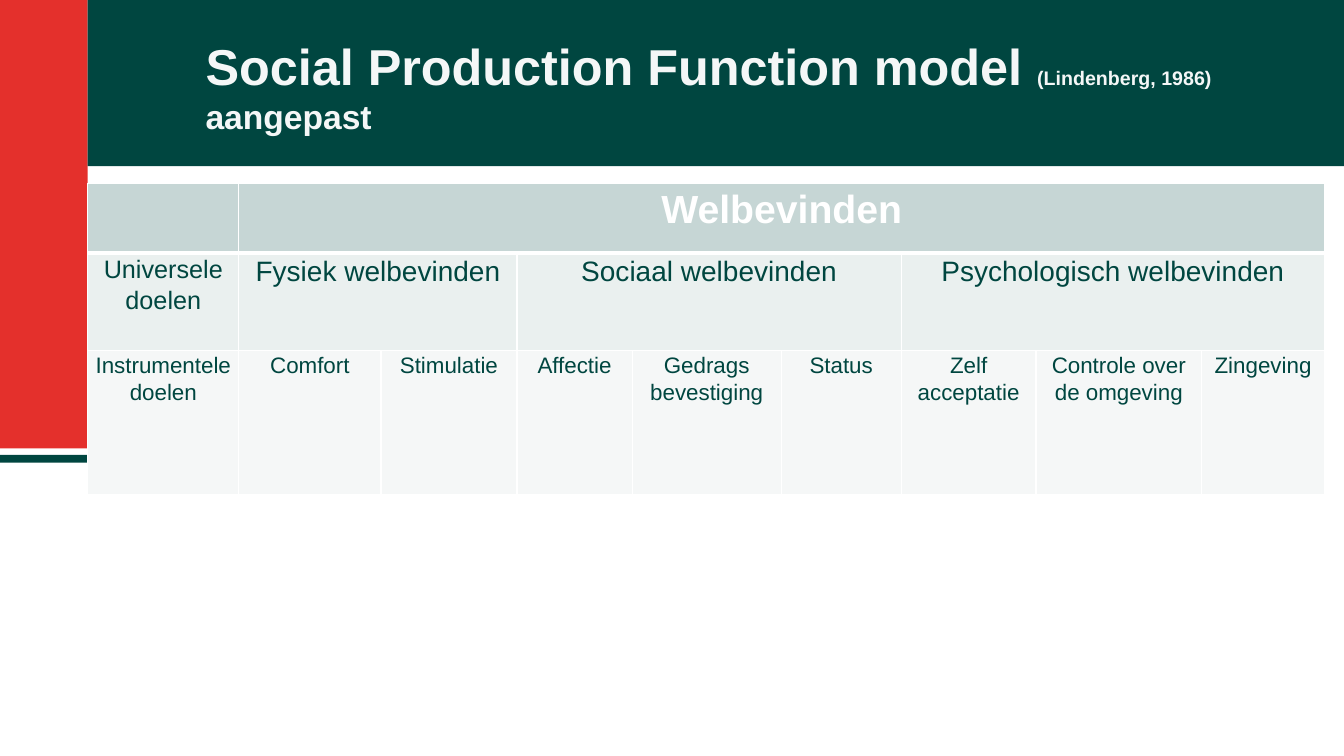
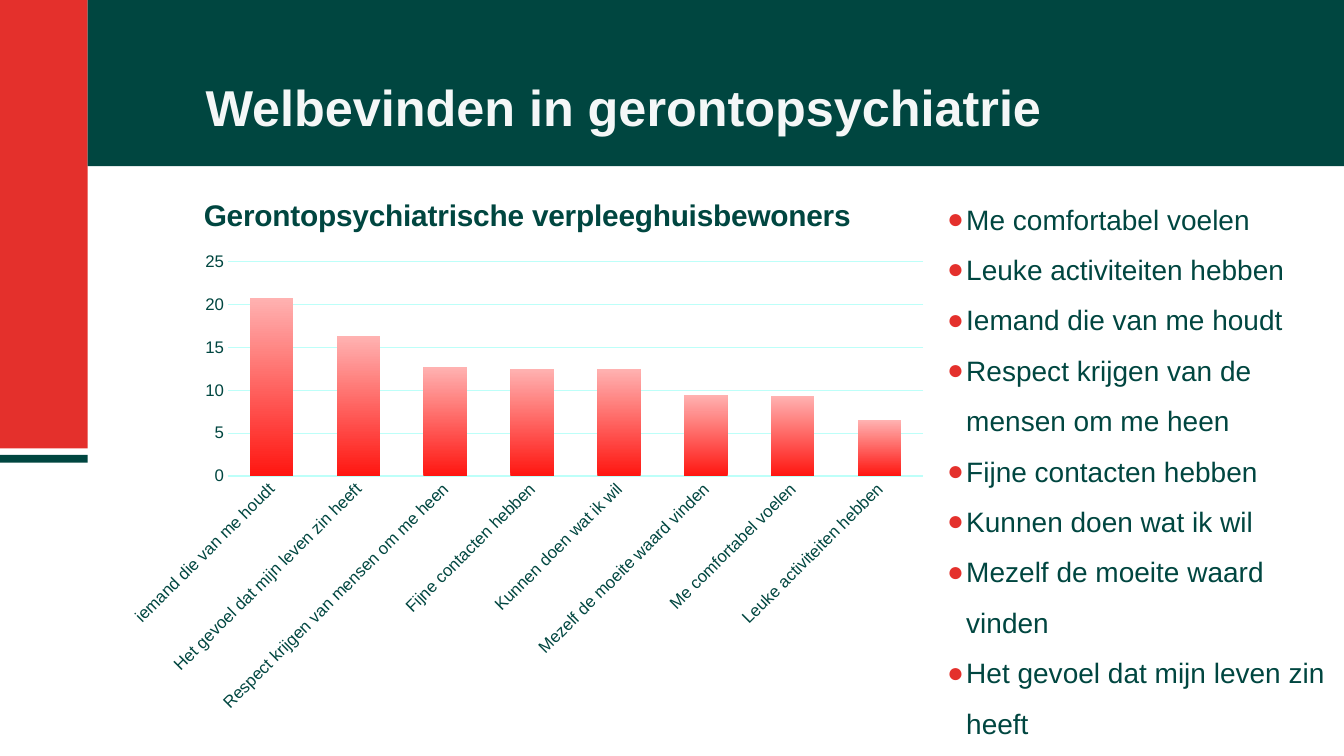
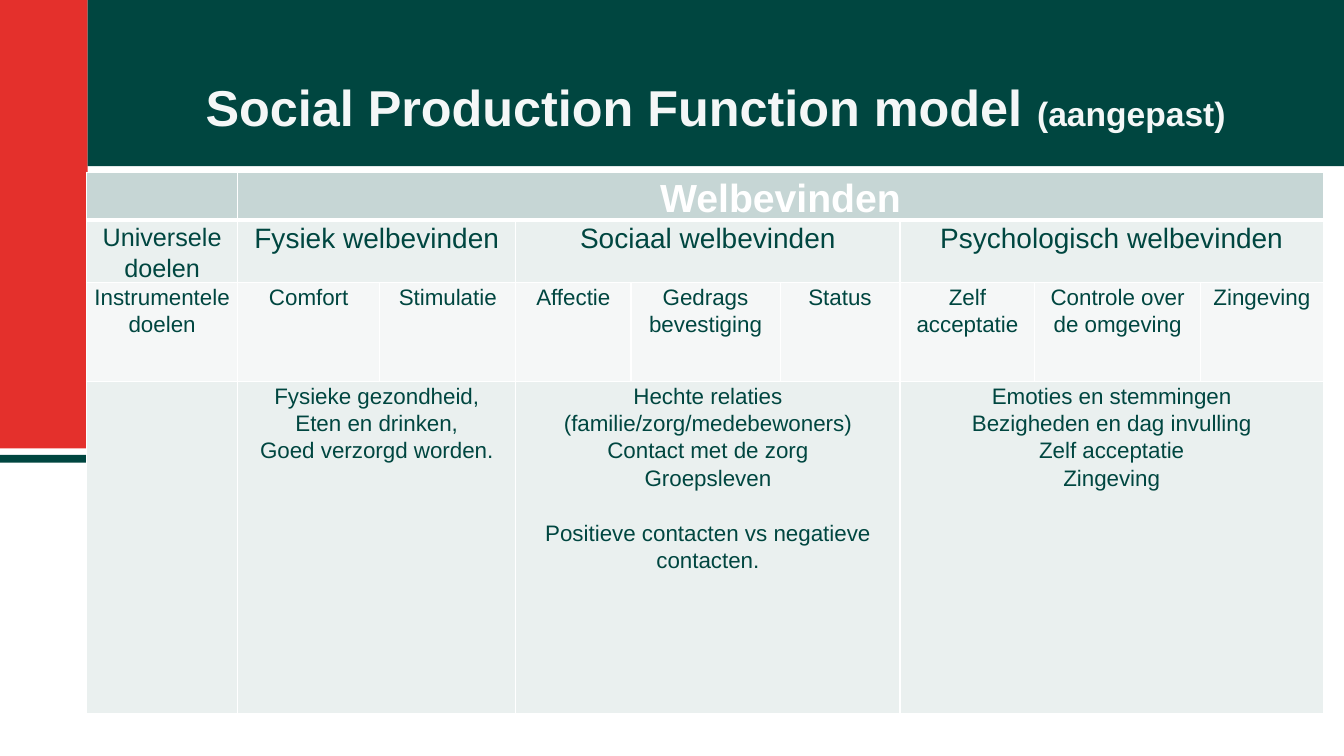
from lxml import etree
from pptx import Presentation
from pptx import util as u
from pptx.chart.data import CategoryChartData
from pptx.dml.color import RGBColor
from pptx.enum import chart as ch, shapes as sh, text as tx
from pptx.oxml.ns import qn

RED, GREEN, PALE, WHITE = "E4302C", "004640", "F4F7F7", "FFFFFF"
GRID = "BDFFF9"
FILLS = ["C6D6D5", "EAF0EF", "F5F7F7", "EAF0EF"]
BANDS = [
    (0, 0, 2.21, 11.3, RED),
    (0, 11.46, 2.21, 0.2, GREEN),
    (2.21, 0, 31.66, 4.19, GREEN),
]
INSET = u.Cm(0.25)
FRAME = dict(
    margin_left=INSET, margin_right=INSET, margin_top=INSET,
    margin_bottom=INSET, word_wrap=True, auto_size=tx.MSO_AUTO_SIZE.NONE,
)
CELL = dict(
    margin_left=u.Cm(0.18), margin_right=u.Cm(0.18),
    margin_top=0, margin_bottom=0,
)
COLS = [3.81, 3.58, 3.43, 2.9, 3.76, 3.02, 3.4, 4.17, 3.1]
GOALS = [
    [("", 1, 18), ("Welbevinden", 8, 28)],
    [("Universele doelen", 1, 18), ("Fysiek welbevinden", 2, 20),
     ("Sociaal welbevinden", 3, 20), ("Psychologisch welbevinden", 3, 20)],
    [(name, 1, 16) for name in (
        "Instrumentele doelen", "Comfort", "Stimulatie", "Affectie",
        "Gedrags bevestiging", "Status", "Zelf acceptatie",
        "Controle over de omgeving", "Zingeving")],
]
NEEDS = [
    ("", 1, 16),
    ("Fysieke gezondheid,\nEten en drinken,\nGoed verzorgd worden.", 2, 16),
    ("Hechte relaties (familie/zorg/medebewoners)\nContact met de zorg\n"
     "Groepsleven\nPositieve contacten vs negatieve contacten.", 3, 16),
    ("Emoties en stemmingen\nBezigheden en dag invulling\n"
     "Zelf acceptatie\nZingeving", 3, 16),
]
SCORES = {
    "iemand die van me houdt": 20.8,
    "Het gevoel dat mijn leven zin heeft": 16.3,
    "Respect krijgen van mensen om me heen": 12.7,
    "Fijne contacten hebben": 12.5,
    "Kunnen doen wat ik wil": 12.5,
    "Mezelf de moeite waard vinden": 9.4,
    "Me comfortabel voelen": 9.3,
    "Leuke activiteiten hebben": 6.5,
}
WISHES = [
    "Me comfortabel voelen",
    "Leuke activiteiten hebben",
    "Iemand die van me houdt",
    "Respect krijgen van de mensen om me heen",
    "Fijne contacten hebben",
    "Kunnen doen wat ik wil",
    "Mezelf de moeite waard vinden",
    "Het gevoel dat mijn leven zin heeft",
]


def rgb(code):
    return RGBColor.from_string(code)


def apply(obj, vals):
    for key, val in vals.items():
        setattr(obj, key, val)


def place(shape, x, y, w, h):
    apply(shape, dict(left=u.Cm(x), top=u.Cm(y), width=u.Cm(w), height=u.Cm(h)))


def write(font, size, color=GREEN, bold=False):
    apply(font, dict(name="Arial", size=u.Pt(size), bold=bold))
    font.color.rgb = rgb(color)


def add(parent, tag, **vals):
    return etree.SubElement(parent, qn(tag), vals)


def set_master(prs, slide):
    title = prs.slide_master.placeholders[0]
    for x, y, w, h, color in BANDS:
        band = slide.shapes.add_shape(
            sh.MSO_SHAPE.RECTANGLE, *map(u.Cm, (x, y, w, h)))
        band.shadow.inherit = False
        band.fill.solid()
        band.fill.fore_color.rgb = rgb(color)
        band.line.fill.background()
        title.element.addprevious(band.element)
    place(title, 4.93, 0.48, 27.33, 3.2)
    apply(title.text_frame, FRAME)
    title.text_frame.vertical_anchor = tx.MSO_ANCHOR.BOTTOM


def set_title(slide, *parts):
    frame = slide.shapes.title.text_frame
    frame.auto_size = tx.MSO_AUTO_SIZE.NONE
    para = frame.paragraphs[0]
    para.alignment = tx.PP_ALIGN.LEFT
    for text, size in parts:
        if text == "\n":
            para.add_line_break()
            continue
        run = para.add_run()
        run.text = text
        write(run.font, size, PALE, True)


def set_edges(cell, row):
    props = cell._tc.get_or_add_tcPr()
    thick = {(0, "B"), (1, "T")}
    for side in "LRTB":
        width = u.Pt(3 if (row, side) in thick else 1)
        line = add(props, f"a:ln{side}", w=str(width))
        add(add(line, "a:solidFill"), "a:srgbClr", val=WHITE)


def fill_cell(cell, text, size, head):
    cell.text = text
    for para in cell.text_frame.paragraphs:
        apply(para, dict(alignment=tx.PP_ALIGN.CENTER, line_spacing=1.1))
        write(para.font, size, WHITE if head else GREEN, head)
        for run in para.runs:
            write(run.font, size, WHITE if head else GREEN, head)


def add_goals(slide, x, y, rows, highs):
    table = slide.shapes.add_table(
        len(rows), len(COLS), u.Cm(x), u.Cm(y),
        u.Cm(sum(COLS)), u.Cm(sum(highs))).table
    table.horz_banding = False
    for col, width in zip(table.columns, COLS):
        col.width = u.Cm(width)
    for i, (row, high) in enumerate(zip(rows, highs)):
        table.rows[i].height = u.Cm(high)
        for cell in table.rows[i].cells:
            apply(cell, CELL)
            set_edges(cell, i)
            cell.fill.solid()
            cell.fill.fore_color.rgb = rgb(FILLS[i])
        start = 0
        for text, span, size in row:
            cell = table.cell(i, start)
            if span > 1:
                cell.merge(table.cell(i, start + span - 1))
            fill_cell(cell, text, size, i == 0)
            start += span
    return table


def add_scores(slide):
    name = "Gerontopsychiatrische verpleeghuisbewoners"
    data = CategoryChartData()
    data.categories = list(SCORES)
    data.add_series(name, list(SCORES.values()))
    chart = slide.shapes.add_chart(
        ch.XL_CHART_TYPE.COLUMN_CLUSTERED,
        *map(u.Cm, (2.9, 4.42, 20.78, 13.79)), data).chart
    write(chart.font, 10)
    chart.has_legend = False
    chart.has_title = True
    chart.chart_title.text_frame.text = name
    write(chart.chart_title.text_frame.paragraphs[0].runs[0].font, 21.3, bold=True)

    plot = chart.plots[0]
    apply(plot, dict(gap_width=100, overlap=-24, vary_by_categories=False))
    fill = plot.series[0].format.fill
    fill.gradient()
    fill.gradient_angle = 90
    for stop, color, pos in zip(fill.gradient_stops, ("FF1611", "FFB2B1"), (0, 1)):
        stop.color.rgb = rgb(color)
        stop.position = pos

    cats, vals = chart.category_axis, chart.value_axis
    for axis in (cats, vals):
        axis.major_tick_mark = ch.XL_TICK_MARK.NONE
        write(axis.tick_labels.font, 12)
    apply(vals, dict(minimum_scale=0, maximum_scale=25, major_unit=5))
    vals.format.line.fill.background()
    for line, width in ((cats.format.line, 1), (vals.major_gridlines.format.line, 0.75)):
        line.color.rgb = rgb(GRID)
        line.width = u.Pt(width)
    chart.element.xpath("//c:catAx/c:txPr/a:bodyPr")[0].set("rot", "-2700000")


def add_list(slide, items):
    body = slide.placeholders[1]
    place(body, 23.34, 4.42, 10.52, 14.12)
    frame = body.text_frame
    apply(frame, FRAME)
    frame.text = "\n".join(items)
    for para in frame.paragraphs:
        props = para._p.get_or_add_pPr()
        apply_indent = dict(marL=u.Cm(0.76), indent=-u.Cm(0.48))
        for key, val in apply_indent.items():
            props.set(key, str(val))
        add(add(props, "a:buClr"), "a:srgbClr", val=RED)
        add(props, "a:buFont", typeface="Arial")
        add(props, "a:buChar", char="●")
        apply(para, dict(line_spacing=1.5, space_before=u.Pt(0)))
        write(para.runs[0].font, 20)


def main():
    prs = Presentation()
    apply(prs, dict(slide_width=u.Cm(33.87), slide_height=u.Cm(19.05)))
    model, chart, needs = [
        prs.slides.add_slide(prs.slide_layouts[i]) for i in (5, 1, 5)]
    set_master(prs, model)

    set_title(model, ("Social Production Function model ", 36),
              ("(Lindenberg, 1986)", 14), ("\n", 14), ("aangepast", 24))
    add_goals(model, 2.21, 4.62, GOALS, [1.75, 2.46, 3.63])

    set_title(chart, ("Welbevinden in gerontopsychiatrie", 36))
    add_scores(chart)
    add_list(chart, WISHES)

    set_title(needs, ("Social Production Function model ", 36), ("(aangepast)", 24))
    table = add_goals(needs, 2.18, 4.34, GOALS + [NEEDS], [0.89, 1.57, 2.49, 8.38])
    table.cell(3, 3).text_frame.paragraphs[-1].space_before = u.Pt(20)

    prs.save("out.pptx")


if __name__ == "__main__":
    main()
